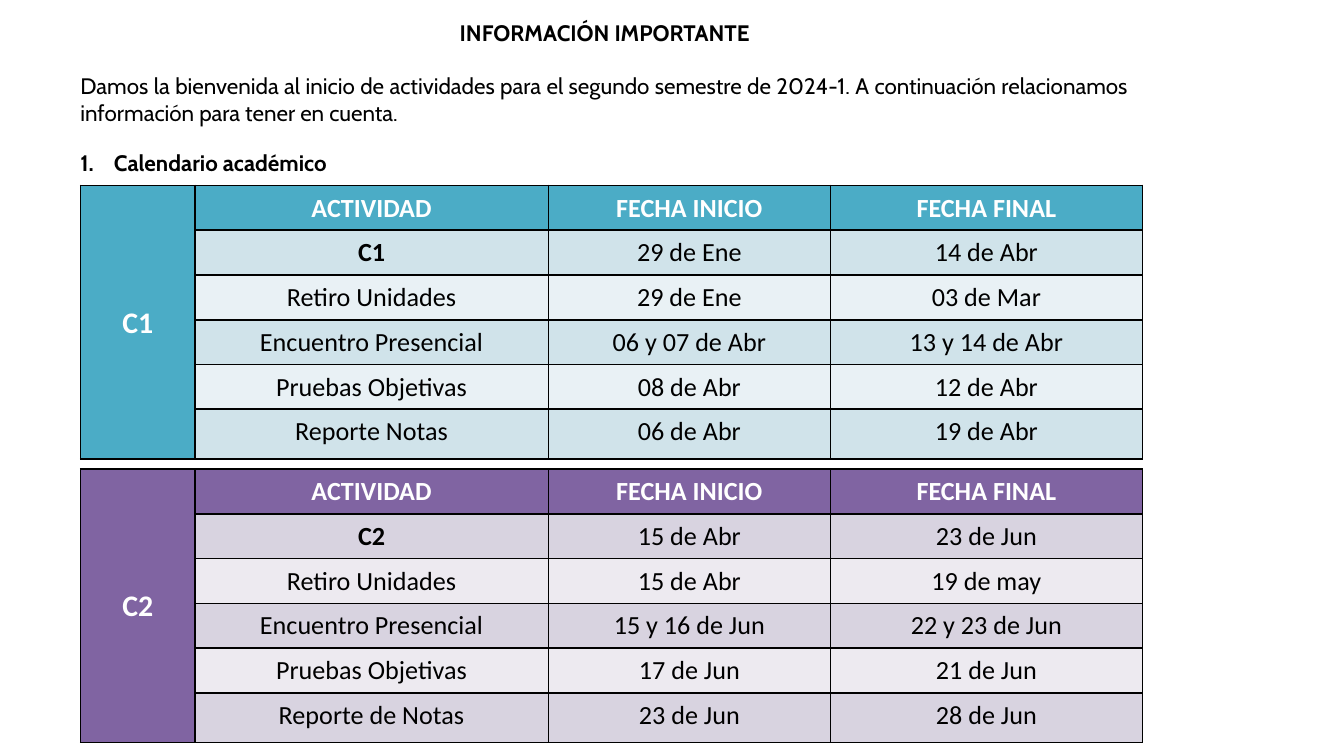
import pptx
import pptx.util
import pptx.dml.color
import pptx.enum.text
import pptx.oxml
import pptx.oxml.ns

Inches, Pt = pptx.util.Inches, pptx.util.Pt
RGBColor = pptx.dml.color.RGBColor
ALIGN, ANCHOR = pptx.enum.text.PP_ALIGN, pptx.enum.text.MSO_ANCHOR

BLACK = RGBColor(0, 0, 0)
WHITE = RGBColor(255, 255, 255)
TEAL = RGBColor(0x4B, 0xAC, 0xC6)
TEAL_BANDS = RGBColor(0xD0, 0xE3, 0xEA), RGBColor(0xE9, 0xF1, 0xF5)
PURPLE = RGBColor(0x80, 0x64, 0xA2)
PURPLE_BANDS = RGBColor(0xD8, 0xD3, 0xE0), RGBColor(0xED, 0xEA, 0xF0)

TITLE = "INFORMACIÓN IMPORTANTE"
WELCOME = ("Damos la bienvenida al inicio de actividades para el segundo semestre de 2024-1. "
           "A continuación relacionamos información para tener en cuenta.")
SECTION = "Calendario académico"
HEADINGS = ("ACTIVIDAD", "FECHA INICIO", "FECHA FINAL")
CALENDARS = [
    ("C1", 1.38, TEAL, TEAL_BANDS, [
        ("C1", "29 de Ene", "14 de Abr"),
        ("Retiro Unidades", "29 de Ene", "03 de Mar"),
        ("Encuentro Presencial", "06 y 07 de Abr", "13 y 14 de Abr"),
        ("Pruebas Objetivas", "08 de Abr", "12 de Abr"),
        ("Reporte Notas", "06 de Abr", "19 de Abr"),
    ]),
    ("C2", 3.49, PURPLE, PURPLE_BANDS, [
        ("C2", "15 de Abr", "23 de Jun"),
        ("Retiro Unidades", "15 de Abr", "19 de may"),
        ("Encuentro Presencial", "15 y 16 de Jun", "22 y 23 de Jun"),
        ("Pruebas Objetivas", "17 de Jun", "21 de Jun"),
        ("Reporte de Notas", "23 de Jun", "28 de Jun"),
    ]),
]
SLIDE_WIDTH = 10
SLIDE_HEIGHT = SLIDE_WIDTH * 9 / 16
COLUMN_WIDTHS = (0.85, 2.63, 2.1, 2.32)
CALENDAR_LEFT, CALENDAR_HEIGHT, LAST_ROW_HEIGHT = 0.6, 2, 0.37
TEXT_LEFT, TEXT_WIDTH = 0.5, 8


def format_text(paragraph, font_name, size, color, bold, alignment):
    paragraph.alignment = alignment
    for run in paragraph.runs:
        run.font.name, run.font.size, run.font.bold = font_name, Pt(size), bold
        run.font.color.rgb = color


def format_cell(cell, fill, color, size, bold):
    properties = cell._tc.get_or_add_tcPr()
    for side in ("lnL", "lnR", "lnT", "lnB"):
        properties.append(pptx.oxml.parse_xml(
            f'<a:{side} {pptx.oxml.ns.nsdecls("a")} w="{Pt(1)}"><a:solidFill>'
            f'<a:srgbClr val="{BLACK}"/></a:solidFill></a:{side}>'))
    cell.fill.solid()
    cell.fill.fore_color.rgb = fill
    cell.margin_top, cell.margin_bottom = Inches(0.05), Inches(0.04)
    format_text(cell.text_frame.paragraphs[0], "Calibri", size, color, bold, ALIGN.CENTER)


def add_calendar(slide, cycle, top, accent, bands, activities):
    rows = [HEADINGS] + activities
    calendar = slide.shapes.add_table(
        len(rows), len(COLUMN_WIDTHS), Inches(CALENDAR_LEFT), Inches(top),
        Inches(sum(COLUMN_WIDTHS)), Inches(CALENDAR_HEIGHT)).table
    for column, width in zip(calendar.columns, COLUMN_WIDTHS):
        column.width = Inches(width)
    for row in calendar.rows:
        row.height = Inches(CALENDAR_HEIGHT / len(rows))
    calendar.rows[len(rows) - 1].height = Inches(LAST_ROW_HEIGHT)

    cycle_cell = calendar.cell(0, 0)
    cycle_cell.merge(calendar.cell(len(rows) - 1, 0))
    cycle_cell.text_frame.text = cycle
    cycle_cell.vertical_anchor = ANCHOR.MIDDLE
    for r, entries in enumerate(rows):
        format_cell(calendar.cell(r, 0), accent, WHITE, 16, True)
        for c, entry in enumerate(entries, 1):
            cell = calendar.cell(r, c)
            cell.text_frame.text = entry
            format_cell(cell, accent if r == 0 else bands[(r - 1) % 2],
                        WHITE if r == 0 else BLACK, 14, r == 0 or entry == cycle)


def place(shape, top, height):
    shape.left, shape.top = Inches(TEXT_LEFT), Inches(top)
    shape.width, shape.height = Inches(TEXT_WIDTH), Inches(height)
    shape.text_frame.word_wrap = True
    shape.text_frame.vertical_anchor = ANCHOR.TOP


def main():
    """Build the academic calendar slide."""
    presentation = pptx.Presentation()
    presentation.slide_width = Inches(SLIDE_WIDTH)
    presentation.slide_height = Inches(SLIDE_HEIGHT)
    slide = presentation.slides.add_slide(presentation.slide_layouts[5])

    title = slide.shapes.title
    place(title, 0.09, 0.3)
    title.text_frame.text = TITLE
    title.text_frame.auto_size = pptx.enum.text.MSO_AUTO_SIZE.NONE
    format_text(title.text_frame.paragraphs[0], "Cabin", 12, BLACK, True, ALIGN.CENTER)

    introduction = slide.shapes.add_textbox(0, 0, 0, 0)
    place(introduction, 0.49, 0.9)
    welcome = introduction.text_frame.paragraphs[0]
    welcome.text = WELCOME
    format_text(welcome, "Cabin", 12, BLACK, False, ALIGN.JUSTIFY)
    section = introduction.text_frame.add_paragraph()
    section.text = SECTION
    section.space_before = Pt(12.5)
    numbering = section._p.get_or_add_pPr()
    numbering.set("marL", str(Inches(0.25)))
    numbering.set("indent", str(-Inches(0.25)))
    numbering.append(pptx.oxml.parse_xml(
        f'<a:buAutoNum {pptx.oxml.ns.nsdecls("a")} type="arabicPeriod"/>'))
    format_text(section, "Cabin", 12, BLACK, True, ALIGN.JUSTIFY)

    for calendar in CALENDARS:
        add_calendar(slide, *calendar)
    presentation.save("out.pptx")


if __name__ == "__main__":
    main()
